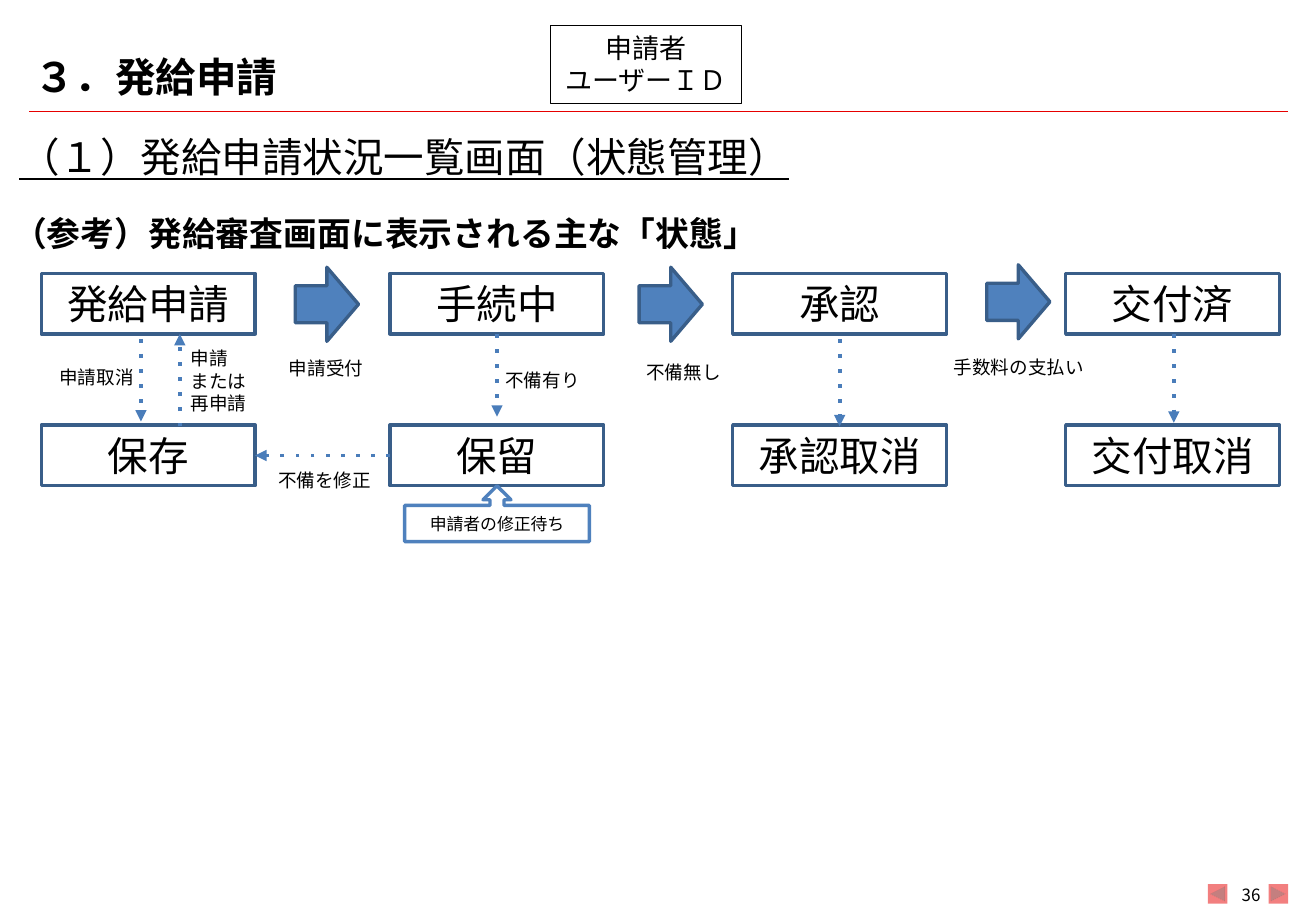
"""Build the slide that shows the states of an issue application."""
from dataclasses import dataclass

from lxml.etree import SubElement
from pptx import Presentation
from pptx.dml.color import RGBColor
from pptx.enum.shapes import MSO_CONNECTOR, MSO_SHAPE
from pptx.enum.text import MSO_ANCHOR, MSO_AUTO_SIZE, PP_ALIGN
from pptx.oxml.ns import qn
from pptx.util import Inches, Pt


@dataclass(frozen=True)
class Theme:
    font: str = "Noto Sans CJK JP"
    black: str = "000000"
    white: str = "FFFFFF"
    red: str = "E60000"
    blue: str = "4F81BD"
    edge: str = "395E89"
    link: str = "4A7DBA"
    head: int = 24
    sub: int = 20
    user: int = 16
    label: int = 11
    small: int = 10


theme = Theme()
deck = Presentation()
deck.slide_width, deck.slide_height = Inches(10.83), Inches(7.5)
slide = deck.slides.add_slide(deck.slide_layouts[5])
shapes = slide.shapes


def write(shape, text, size=theme.label, bold=False, under=False,
          align=PP_ALIGN.LEFT, anchor=MSO_ANCHOR.TOP, side=0.1):
    frame = shape.text_frame
    frame.text = text
    frame.word_wrap = True
    frame.auto_size = MSO_AUTO_SIZE.NONE
    frame.vertical_anchor = anchor
    frame.margin_left = frame.margin_right = Inches(side)
    frame.margin_top = frame.margin_bottom = Inches(0.05)
    for para in frame.paragraphs:
        para.alignment = align
        for run in para.runs:
            font = run.font
            font.name, font.size = theme.font, Pt(size)
            font.bold, font.underline = bold, under
            font.color.rgb = RGBColor.from_string(theme.black)
            SubElement(font._element, qn("a:ea"), typeface=theme.font)


def draw(kind, box, fill=None, line=None, width=2):
    shape = shapes.add_shape(kind, *map(Inches, box))
    shape.shadow.inherit = False
    for part, color in ((shape.fill, fill), (shape.line.fill, line)):
        if color:
            part.solid()
            part.fore_color.rgb = RGBColor.from_string(color)
        else:
            part.background()
    if line:
        shape.line.width = Pt(width)
    return shape


center = {"align": PP_ALIGN.CENTER, "anchor": MSO_ANCHOR.MIDDLE}

title = shapes.title
title.left, title.top, title.width, title.height = map(
    Inches, (0.18, 0.33, 2.64, 0.59))
write(title, "３．発給申請", size=theme.head, bold=True, anchor=MSO_ANCHOR.MIDDLE)

user = draw(MSO_SHAPE.RECTANGLE, (4.53, 0.21, 1.57, 0.64), line=theme.black, width=0.75)
write(user, "申請者\nユーザーＩＤ", size=theme.user, align=PP_ALIGN.CENTER)

buttons = (
    (MSO_SHAPE.ACTION_BUTTON_BACK_OR_PREVIOUS, 9.94),
    (MSO_SHAPE.ACTION_BUTTON_FORWARD_OR_NEXT, 10.44),
)
for kind, left in buttons:
    button = draw(kind, (left, 7.28, 0.16, 0.16), fill=theme.red)
    color = button._element.spPr.find(qn("a:solidFill"))[0]
    SubElement(color, qn("a:alpha"), val="50000")

columns = (
    (0.34, "発給申請", "保存"),
    (3.21, "手続中", "保留"),
    (6.03, "承認", "承認取消"),
    (8.77, "交付済", "交付取消"),
)
for left, *names in columns:
    for top, name in zip((2.25, 3.5), names):
        state = draw(MSO_SHAPE.RECTANGLE, (left, top, 1.76, 0.5), line=theme.edge)
        write(state, name, size=theme.head, **center)

for left, top in ((2.43, 2.2), (5.26, 2.2), (8.12, 2.18)):
    draw(MSO_SHAPE.RIGHT_ARROW, (left, top, 0.52, 0.61), fill=theme.blue, line=theme.edge)

links = (
    (0.24, 0.92, 10.6, 0.92, theme.red, 0.75),
    (1.16, 2.79, 1.16, 3.47, theme.link, 2.25),
    (1.48, 3.51, 1.48, 2.75, theme.link, 2.25),
    (4.09, 2.75, 4.09, 3.43, theme.link, 2.25),
    (6.91, 2.79, 6.91, 3.51, theme.link, 2.25),
    (9.66, 2.75, 9.66, 3.48, theme.link, 2.25),
    (3.21, 3.75, 2.1, 3.75, theme.link, 2.25),
)
for *ends, color, width in links:
    link = shapes.add_connector(MSO_CONNECTOR.STRAIGHT, *map(Inches, ends))
    link.line.color.rgb = RGBColor.from_string(color)
    link.line.width = Pt(width)
    if color == theme.link:
        edge = link.line._get_or_add_ln()
        SubElement(edge, qn("a:prstDash"), val="dot")
        SubElement(edge, qn("a:tailEnd"), type="triangle")
    SubElement(link._element.spPr, qn("a:effectLst"))

wait = draw(MSO_SHAPE.UP_ARROW_CALLOUT, (3.33, 4, 1.52, 0.46),
            fill=theme.white, line=theme.blue)
for spot, value in enumerate((0.25, 0.25, 0.25, 0.65)):
    wait.adjustments[spot] = value
write(wait, "申請者の修正待ち", size=theme.small, **center)

labels = (
    ("（１）発給申請状況一覧画面（状態管理）", (0.06, 1.04, 9.45, 0.51),
     {"size": theme.head, "under": True}),
    ("（参考）発給審査画面に表示される主な「状態」", (0.01, 1.7, 7.22, 0.44),
     {"size": theme.sub, "bold": True}),
    ("申請受付", (2.28, 2.89, 0.96, 0.29), {}),
    ("不備無し", (5.22, 2.92, 0.96, 0.29), {}),
    ("手数料の支払い", (7.75, 2.88, 1.29, 0.29), {}),
    ("不備有り", (4.06, 2.99, 0.96, 0.29), {}),
    ("不備を修正", (2.19, 3.81, 1.19, 0.29), {}),
    ("申請\nまたは\n再申請", (1.47, 2.81, 1.02, 0.66), {}),
    ("申請取消", (0.39, 2.96, 1.01, 0.29), {}),
    ("36", (10.14, 7.29, 0.31, 0.16), {"size": theme.small, "side": 0, **center}),
)
for text, box, look in labels:
    write(shapes.add_textbox(*map(Inches, box)), text, **look)

deck.save("out.pptx")
